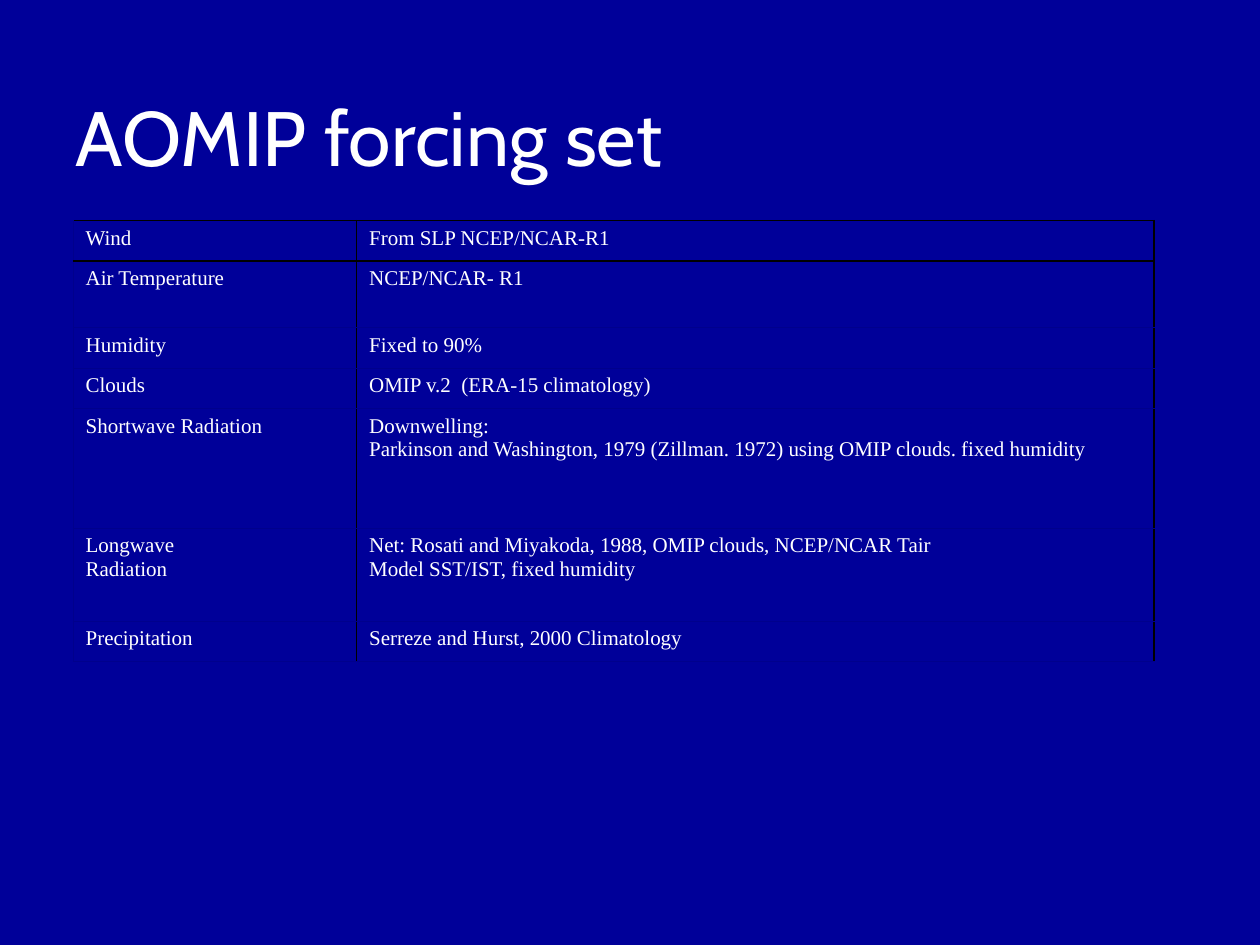
from lxml.etree import SubElement as Sub
from pptx import Presentation
from pptx.dml.color import RGBColor
from pptx.enum.text import MSO_ANCHOR, MSO_AUTO_SIZE, PP_ALIGN
from pptx.oxml.ns import qn
from pptx.util import Inches, Pt

NAVY, WHITE, BLACK, FAINT = "000099", "FFFFFF", "000000", "00008C"
COLS = [2.25, 6.33]
ROWS = [
    (0.32, "Wind", ["From SLP NCEP/NCAR-R1"]),
    (0.53, "Air Temperature", ["NCEP/NCAR- R1"]),
    (0.32, "Humidity", ["Fixed to 90%"]),
    (0.32, "Clouds", ["OMIP v.2  (ERA-15 climatology)"]),
    (0.95, "Shortwave Radiation", [
        "Downwelling: \nParkinson and Washington, 1979 (Zillman. 1972) "
        "using OMIP clouds. fixed humidity"]),
    (0.74, "Longwave\nRadiation", [
        "Net: Rosati and Miyakoda, 1988, OMIP clouds, NCEP/NCAR Tair",
        "Model SST/IST, fixed humidity"]),
    (0.32, "Precipitation", ["Serreze and Hurst, 2000 Climatology"]),
]


def rgb(value):
    return RGBColor.from_string(value)


def add_text(p, text, size, font):
    for i, line in enumerate(text.split("\n")):
        if i:
            p.add_line_break()
        r = p.add_run()
        r.text = line
        r.font.size, r.font.name = Pt(size), font
        r.font.color.rgb = rgb(WHITE)


def set_borders(cell, edges):
    pr = cell._tc.get_or_add_tcPr()
    for side, (color, width) in edges.items():
        ln = Sub(pr, qn(f"a:ln{side}"), w=str(Pt(width)))
        Sub(Sub(ln, qn("a:solidFill")), qn("a:srgbClr"), val=color)


def fill_cell(cell, paragraphs, row, col):
    strong, faint = (BLACK, 1), (FAINT, 0.25)
    set_borders(cell, {
        "L": strong if col else faint,
        "R": strong,
        "T": strong if row < 2 else faint,
        "B": strong if row == 0 else faint,
    })
    cell.fill.background()
    tf = cell.text_frame
    for i, text in enumerate(paragraphs):
        p = tf.add_paragraph() if i else tf.paragraphs[0]
        add_text(p, text, 12, "Times New Roman")


def place_title(s, box):
    sp = s.shapes.title
    sp.left, sp.top, sp.width, sp.height = map(Inches, box)
    tf = sp.text_frame
    tf.auto_size = MSO_AUTO_SIZE.NONE
    tf.vertical_anchor = MSO_ANCHOR.MIDDLE
    p = tf.paragraphs[0]
    p.alignment = PP_ALIGN.LEFT
    add_text(p, "AOMIP forcing set", 44, "Cabin")


def place_table(s, box):
    table = s.shapes.add_table(len(ROWS), len(COLS), *map(Inches, box)).table
    table.first_row = table.horz_banding = False
    for column, width in zip(table.columns, COLS):
        column.width = Inches(box[2] * width / sum(COLS))
    total = sum(row[0] for row in ROWS)
    for i, (height, name, source) in enumerate(ROWS):
        table.rows[i].height = Inches(box[3] * height / total)
        fill_cell(table.cell(i, 0), [name], i, 0)
        fill_cell(table.cell(i, 1), source, i, 1)


def main():
    prs = Presentation()
    prs.slide_width, prs.slide_height = Inches(10), Inches(7.5)
    s = prs.slides.add_slide(prs.slide_layouts[5])
    s.background.fill.solid()
    s.background.fill.fore_color.rgb = rgb(NAVY)
    place_title(s, (0.5, 0.32, 9, 1.51))
    place_table(s, (0.58, 1.75, 8.58, 3.5))
    prs.save("out.pptx")


if __name__ == "__main__":
    main()
